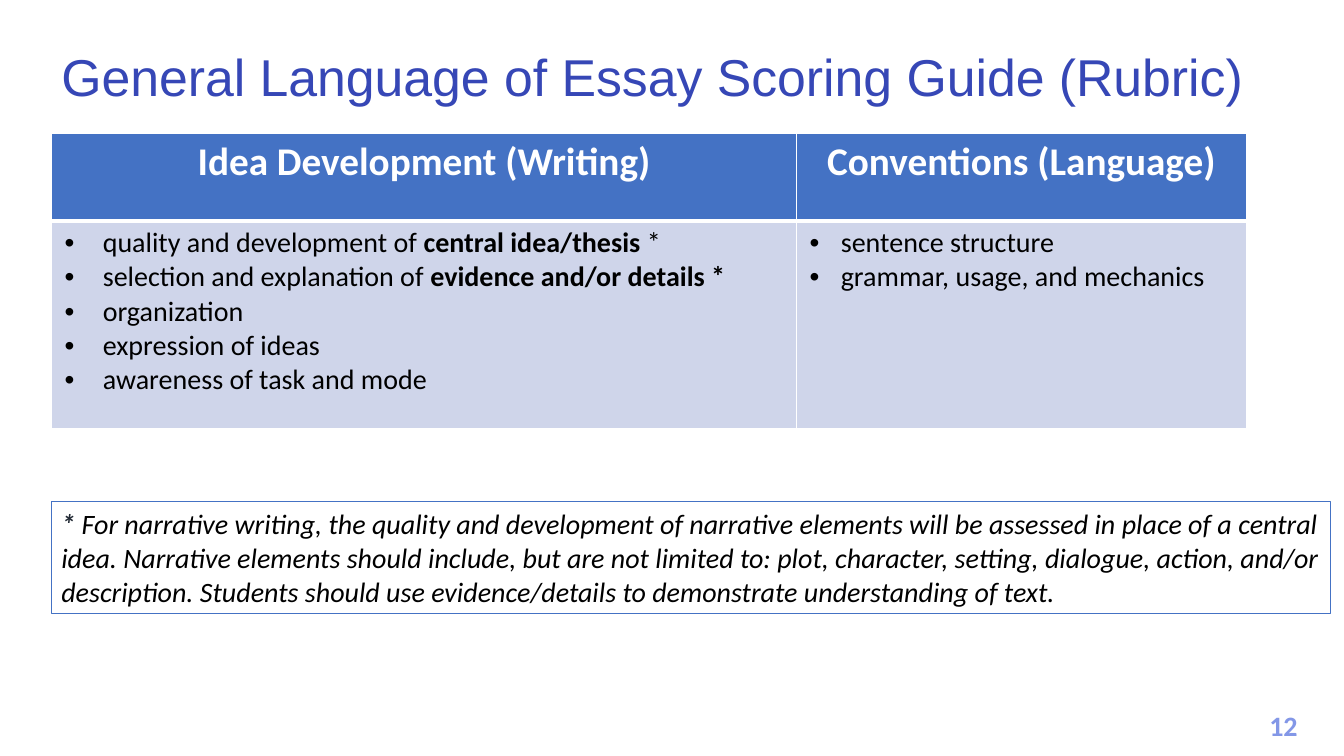
from dataclasses import dataclass

from lxml import etree
from pptx import Presentation
from pptx.dml.color import RGBColor
from pptx.enum.shapes import MSO_SHAPE
from pptx.enum.text import MSO_ANCHOR, PP_ALIGN
from pptx.oxml.ns import qn
from pptx.table import _Cell
from pptx.text.text import TextFrame
from pptx.util import Emu, Pt

LEFT, CENTER = PP_ALIGN.LEFT, PP_ALIGN.CENTER
TOP, BOTTOM = MSO_ANCHOR.TOP, MSO_ANCHOR.BOTTOM
RECTANGLE = MSO_SHAPE.RECTANGLE
EMU_PER_PX = 9144
COLORS = {
    "title": "3647B6",
    "number": "8397E7",
    "header": "4472C4",
    "body": "CFD5EA",
    "white": "FFFFFF",
    "black": "000000",
    "star": "222A35",
}


@dataclass(frozen=True)
class Span:
    text: str
    bold: bool = False
    color: str | None = None


@dataclass(frozen=True)
class Category:
    heading: str
    width: int
    indent: int
    criteria: list[list[Span]]


CATEGORIES = [
    Category("Idea Development (Writing)", 739, 38, [
        [Span("quality and development of"), Span(" central idea/thesis ", True), Span("*")],
        [Span("selection and explanation of "), Span("evidence and/or details *", True)],
        [Span("organization")],
        [Span("expression of ideas")],
        [Span("awareness of task and mode")],
    ]),
    Category("Conventions (Language)", 446, 31, [
        [Span("sentence structure")],
        [Span("grammar, usage, and mechanics")],
    ]),
]
FOOTNOTE = [
    Span("* ", True, "star"),
    Span("For narrative writing, the quality and development of narrative elements "
         "will be assessed in place of a central idea. Narrative elements should include, "
         "but are not limited to: plot, character, setting, dialogue, action, and/or "
         "description. Students should use evidence/details to demonstrate understanding "
         "of text."),
]


def px(length: int) -> Emu:
    return Emu(length * EMU_PER_PX)


def rgb(name: str) -> RGBColor:
    return RGBColor.from_string(COLORS[name])


def write(frame: TextFrame, lines: list[list[Span]], *, size: int = 20,
          color: str = "black", font: str = "Calibri", italic: bool = False,
          align: PP_ALIGN = LEFT, anchor: MSO_ANCHOR = TOP,
          spacing: float = 1.0, indent: int = 0) -> None:
    frame.word_wrap = True
    frame.vertical_anchor = anchor
    for index, spans in enumerate(lines):
        paragraph = frame.paragraphs[0] if index == 0 else frame.add_paragraph()
        paragraph.alignment = align
        paragraph.line_spacing = spacing
        if indent:
            properties = paragraph._p.get_or_add_pPr()
            properties.set("marL", str(px(indent)))
            properties.set("indent", str(-px(indent)))
            etree.SubElement(properties, qn("a:buFont"), typeface="Arial")
            etree.SubElement(properties, qn("a:buChar"), char="•")
        for span in spans:
            run = paragraph.add_run()
            run.text = span.text
            run.font.name = font
            run.font.size = Pt(size)
            run.font.bold = span.bold
            run.font.italic = italic
            run.font.color.rgb = rgb(span.color or color)


def style_cell(cell: _Cell, fill: str, top: int, bottom: int) -> None:
    cell.margin_left = cell.margin_right = px(13)
    cell.margin_top = cell.margin_bottom = px(5)
    properties = cell._tc.get_or_add_tcPr()
    for side, points in (("L", 1), ("R", 1), ("T", top), ("B", bottom)):
        border = etree.SubElement(properties, qn(f"a:ln{side}"), w=str(Pt(points)))
        paint = etree.SubElement(border, qn("a:solidFill"))
        etree.SubElement(paint, qn("a:srgbClr"), val=COLORS["white"])
    cell.fill.solid()
    cell.fill.fore_color.rgb = rgb(fill)


def main() -> None:
    deck = Presentation()
    deck.slide_width, deck.slide_height = px(1333), px(750)
    slide = deck.slides.add_slide(deck.slide_layouts[6])
    shapes = slide.shapes

    page_number = shapes.add_textbox(px(1242), px(698), px(62), px(44))
    write(page_number.text_frame, [[Span("12", True)]], color="number", align=CENTER)

    title = shapes.add_textbox(px(51), px(24), px(1202), px(88))
    write(title.text_frame, [[Span("General Language of Essay Scoring Guide (Rubric)")]],
          size=37, color="title", font="Arial", anchor=BOTTOM, spacing=0.9)

    rubric = shapes.add_table(2, len(CATEGORIES), px(51), px(132),
                              px(sum(c.width for c in CATEGORIES)), px(293)).table
    rubric.horz_banding = False
    rubric.rows[0].height, rubric.rows[1].height = px(87), px(206)
    for column, category in enumerate(CATEGORIES):
        rubric.columns[column].width = px(category.width)
        heading, criteria = rubric.cell(0, column), rubric.cell(1, column)
        style_cell(heading, "header", top=1, bottom=3)
        style_cell(criteria, "body", top=3, bottom=1)
        write(heading.text_frame, [[Span(category.heading, True)]],
              size=28, color="white", align=CENTER)
        write(criteria.text_frame, category.criteria, indent=category.indent)

    footnote = shapes.add_shape(RECTANGLE, px(51), px(498), px(1269), px(111))
    footnote.shadow.inherit = False
    footnote.fill.background()
    footnote.line.color.rgb = rgb("header")
    footnote.line.width = Pt(0.75)
    write(footnote.text_frame, [FOOTNOTE], italic=True)

    deck.save("out.pptx")


if __name__ == "__main__":
    main()
